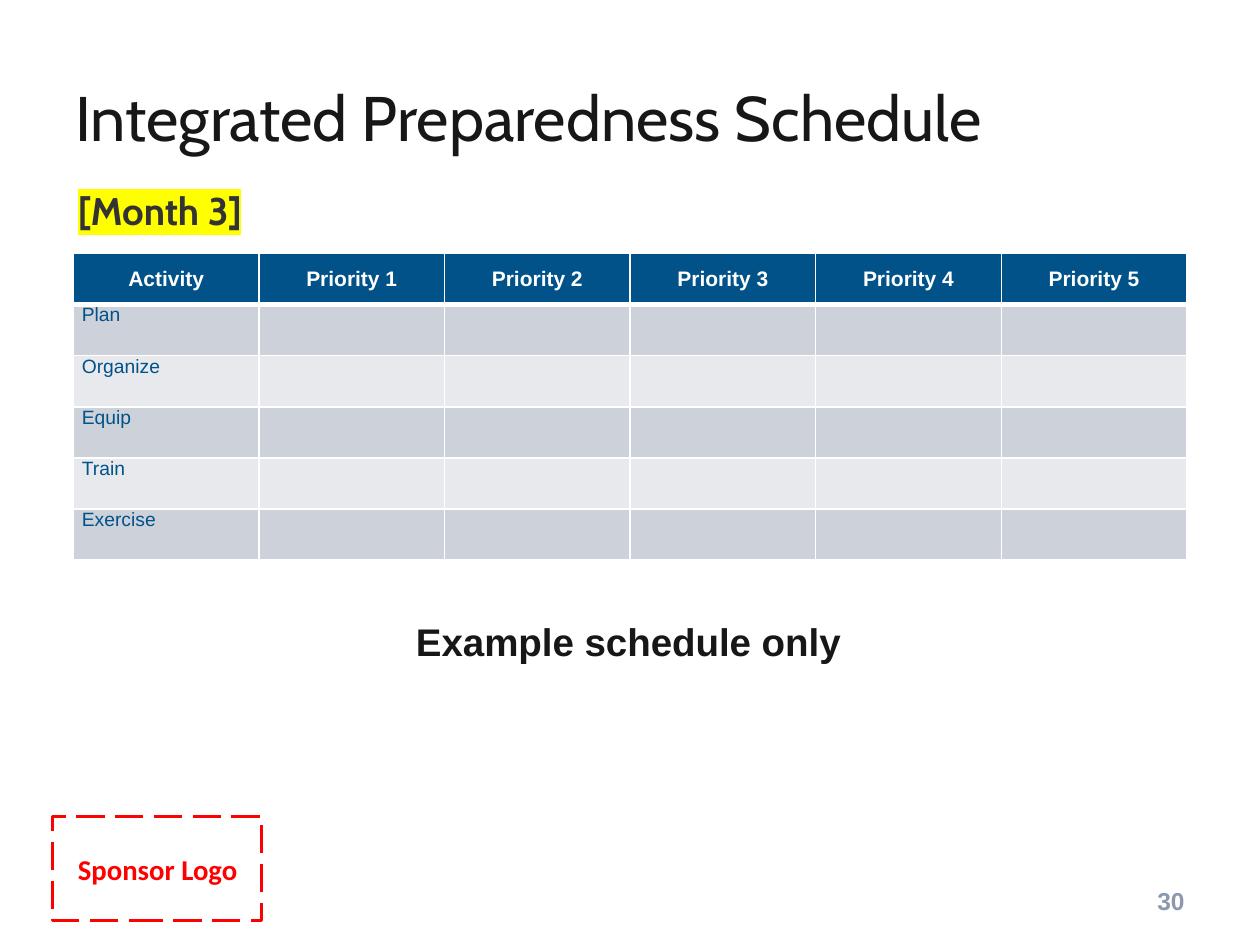
from dataclasses import dataclass

from lxml.etree import SubElement
from pptx import Presentation
from pptx.dml.color import RGBColor
from pptx.enum.dml import MSO_LINE
from pptx.enum.shapes import MSO_SHAPE
from pptx.enum.text import MSO_ANCHOR, PP_ALIGN
from pptx.oxml import parse_xml
from pptx.oxml.ns import nsdecls, qn
from pptx.util import Cm, Pt


@dataclass(frozen=True)
class Theme:
    ink: str = "181717"
    heading: str = "333333"
    blue: str = "005288"
    white: str = "FFFFFF"
    bands: tuple = ("CCD1DA", "E7E9ED")
    red: str = "FF0000"
    page: str = "8C98B0"
    mark: str = "FFFF00"
    display: str = "Cabin"
    body: str = "Arial"
    label: str = "Calibri"
    title_size: float = 36
    sub_size: float = 22
    label_size: float = 16.4
    page_size: float = 14
    head_size: float = 12
    cell_size: float = 11


T = Theme()
LEFT, MID, RIGHT = PP_ALIGN.LEFT, PP_ALIGN.CENTER, PP_ALIGN.RIGHT
TOP, CENTRE, BOTTOM = MSO_ANCHOR.TOP, MSO_ANCHOR.MIDDLE, MSO_ANCHOR.BOTTOM

HEADERS = ["Activity"] + [f"Priority {n}" for n in range(1, 6)]
ACTIVITIES = ["Plan", "Organize", "Equip", "Train", "Exercise"]
TABLE_BOX = (1.48, 5.11, 22.45, 6.18)
LOGO_BOX = (1.06, 16.46, 4.21, 2.1)

TEXTS = [
    ("Integrated Preparedness Schedule", (1.27, 0.76, 22.86, 3.18), CENTRE, LEFT,
     (T.display, T.title_size, T.ink, False)),
    ("[Month 3]", (1.32, 3.05, 11.23, 1.78), BOTTOM, LEFT,
     (T.display, T.sub_size, T.heading, True)),
    ("Example schedule only", (1.24, 11.73, 22.86, 1.78), BOTTOM, MID,
     (T.body, T.sub_size, T.ink, True)),
    ("30", (18.21, 17.65, 5.92, 1.02), CENTRE, RIGHT,
     (T.body, T.page_size, T.page, True)),
]
LOGO_TEXT = ("Sponsor Logo", (1.57, 17.17, 3.63, 0.71), TOP, LEFT,
             (T.label, T.label_size, T.red, True))


def rgb(value):
    return RGBColor.from_string(value)


def write(tf, text, align, style):
    p = tf.paragraphs[0]
    p.text = text
    p.alignment = align
    p.font.name, p.font.size = style[0], Pt(style[1])
    p.font.color.rgb, p.font.bold = rgb(style[2]), style[3]
    return p


def add_text(s, text, box, anchor, align, style):
    tf = s.shapes.add_textbox(*map(Cm, box)).text_frame
    tf.word_wrap = True
    tf.vertical_anchor = anchor
    write(tf, text, align, style)
    return tf


def highlight(tf, color):
    rPr = tf.paragraphs[0].runs[0]._r.get_or_add_rPr()
    mark = SubElement(rPr, qn("a:highlight"))
    SubElement(mark, qn("a:srgbClr")).set("val", color)


def style_cell(cell, fill, top=1, bottom=1):
    cell.fill.solid()
    cell.fill.fore_color.rgb = rgb(fill)
    tcPr = cell._tc.get_or_add_tcPr()
    for i, (side, width) in enumerate(zip("LRTB", (1, 1, top, bottom))):
        tcPr.insert(i, parse_xml(
            f'<a:ln{side} {nsdecls("a")} w="{Pt(width)}"><a:solidFill>'
            f'<a:srgbClr val="{T.white}"/></a:solidFill></a:ln{side}>'))


def add_schedule(s):
    rows, cols = len(ACTIVITIES) + 1, len(HEADERS)
    x, y, w, h = TABLE_BOX
    table = s.shapes.add_table(rows, cols, Cm(x), Cm(y), Cm(w), Cm(h)).table
    for col in table.columns:
        col.width = Cm(w / cols)
    for row in table.rows:
        row.height = Cm(h / rows)
    for c, header in enumerate(HEADERS):
        cell = table.cell(0, c)
        cell.vertical_anchor = CENTRE
        write(cell.text_frame, header, MID, (T.body, T.head_size, T.white, True))
        style_cell(cell, T.blue, bottom=3)
    for r, activity in enumerate(ACTIVITIES, 1):
        for c in range(cols):
            style_cell(table.cell(r, c), T.bands[(r - 1) % 2], top=3 if r == 1 else 1)
        cell = table.cell(r, 0)
        cell.margin_left = cell.margin_right = Cm(0.17)
        cell.margin_top = cell.margin_bottom = 0
        p = write(cell.text_frame, activity, LEFT, (T.body, T.cell_size, T.blue, False))
        p.space_after = Pt(6)


def add_logo_frame(s):
    sp = s.shapes.add_shape(MSO_SHAPE.RECTANGLE, *map(Cm, LOGO_BOX))
    sp.shadow.inherit = False
    sp.fill.background()
    sp.line.color.rgb = rgb(T.red)
    sp.line.width = Pt(2)
    sp.line.dash_style = MSO_LINE.LONG_DASH
    tf = add_text(s, *LOGO_TEXT)
    tf.margin_left = tf.margin_right = tf.margin_top = tf.margin_bottom = 0


def main():
    prs = Presentation()
    prs.slide_width, prs.slide_height = Cm(25.4), Cm(19.05)
    s = prs.slides.add_slide(prs.slide_layouts[6])
    add_logo_frame(s)
    title, month, note, page = [add_text(s, *item) for item in TEXTS]
    highlight(month, T.mark)
    add_schedule(s)
    prs.save("out.pptx")


if __name__ == "__main__":
    main()
